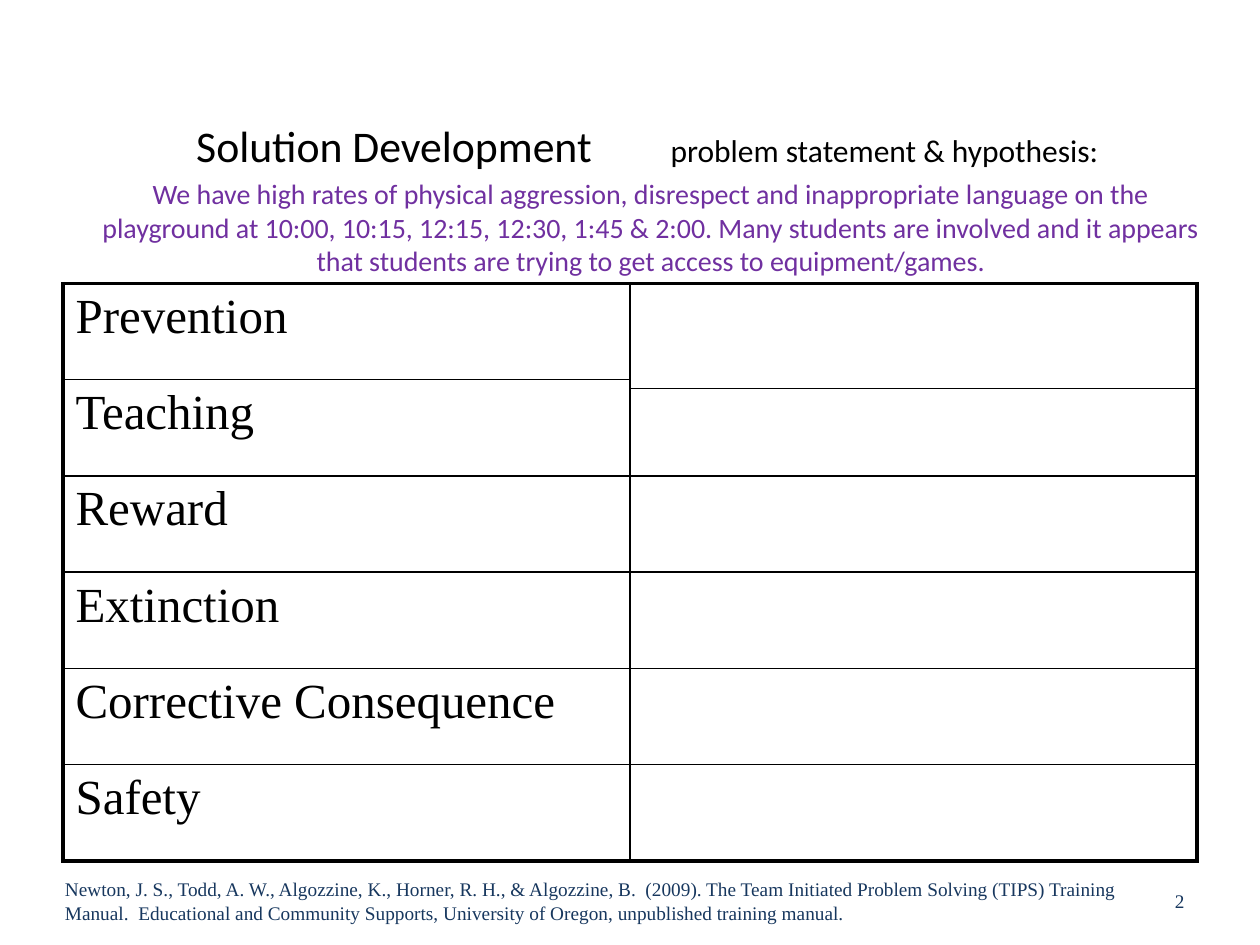
from dataclasses import dataclass

from lxml import etree
from pptx import Presentation
from pptx.dml.color import RGBColor
from pptx.enum.shapes import MSO_CONNECTOR
from pptx.enum.text import MSO_ANCHOR, MSO_AUTO_SIZE, PP_ALIGN
from pptx.oxml.ns import qn
from pptx.util import Pt

STRAIGHT = MSO_CONNECTOR.STRAIGHT
MIDDLE = MSO_ANCHOR.MIDDLE
NO_AUTOFIT = MSO_AUTO_SIZE.NONE
LEFT, CENTER, RIGHT = PP_ALIGN.LEFT, PP_ALIGN.CENTER, PP_ALIGN.RIGHT


@dataclass(frozen=True)
class Theme:
    heading_font: str = "Calibri"
    body_font: str = "Times New Roman"
    ink: str = "000000"
    statement: str = "7030A0"
    footer: str = "17375E"
    heading_size: int = 25
    gap_size: int = 40
    subheading_size: int = 18
    statement_size: int = 16
    strategy_size: int = 28
    footer_size: int = 11
    outer_border: float = 2.25
    inner_border: float = 1
    divider: float = 0.75


THEME = Theme()
STRATEGIES = ["Prevention", "Teaching", "Reward", "Extinction",
              "Corrective Consequence", "Safety"]
TABLE_LEFT, TABLE_TOP = 36, 162
COLUMN_WIDTH, ROW_HEIGHT = 324, 55
STATEMENT = (
    "We have high rates of physical aggression, disrespect and inappropriate "
    "language on the playground at 10:00, 10:15, 12:15, 12:30, 1:45 & 2:00. "
    "Many students are involved and it appears that students are trying to "
    "get access to equipment/games."
)
CITATION = (
    "Newton, J. S., Todd, A. W., Algozzine, K., Horner, R. H., & Algozzine, B.  "
    "(2009). The Team Initiated Problem Solving (TIPS) Training Manual.  "
    "Educational and Community Supports, University of Oregon, unpublished "
    "training manual."
)


def add_run(paragraph, text, size, color, font):
    run = paragraph.add_run()
    run.text = text
    run.font.size = Pt(size)
    run.font.name = font
    run.font.color.rgb = RGBColor.from_string(color)
    return run


def place_title(slide):
    title = slide.shapes.title
    title.left, title.top = Pt(48), Pt(42)
    title.width, title.height = Pt(648), Pt(144)
    frame = title.text_frame
    frame.auto_size = NO_AUTOFIT
    frame.word_wrap = True
    frame.vertical_anchor = MIDDLE
    frame.margin_bottom = Pt(20)
    heading = frame.paragraphs[0]
    heading.alignment = CENTER
    font = THEME.heading_font
    add_run(heading, "Solution Development", THEME.heading_size, THEME.ink, font)
    gap = add_run(heading, " ", THEME.gap_size, THEME.ink, font)
    gap.font._element.set("spc", "3600")
    add_run(heading, "problem statement & hypothesis: ",
            THEME.subheading_size, THEME.ink, font)
    heading.add_line_break()
    add_run(heading, STATEMENT, THEME.statement_size, THEME.statement, font)


def set_borders(cell, widths):
    properties = cell._tc.get_or_add_tcPr()
    for position, (side, width) in enumerate(widths.items()):
        border = etree.Element(qn(f"a:ln{side}"), w=str(int(Pt(width))))
        fill = etree.SubElement(border, qn("a:solidFill"))
        etree.SubElement(fill, qn("a:srgbClr"), val=THEME.ink)
        properties.insert(position, border)


def add_strategy_table(slide):
    row_count, column_count = len(STRATEGIES), 2
    table = slide.shapes.add_table(
        row_count, column_count, Pt(TABLE_LEFT), Pt(TABLE_TOP),
        Pt(COLUMN_WIDTH * column_count), Pt(ROW_HEIGHT * row_count)).table
    table.first_row = False
    table.horz_banding = False
    outer, inner = THEME.outer_border, THEME.inner_border
    for row, strategy in enumerate(STRATEGIES):
        for column in range(column_count):
            cell = table.cell(row, column)
            cell.fill.background()
            set_borders(cell, {
                "L": outer if column == 0 else inner,
                "R": outer if column == column_count - 1 else inner,
                "T": outer if row == 0 else inner,
                "B": outer if row == row_count - 1 else inner,
            })
        label = table.cell(row, 0).text_frame.paragraphs[0]
        add_run(label, strategy, THEME.strategy_size, THEME.ink, THEME.body_font)
    table.cell(0, 1).merge(table.cell(1, 1))


def add_divider(slide, left, right, y):
    divider = slide.shapes.add_connector(STRAIGHT, Pt(left), Pt(y), Pt(right), Pt(y))
    divider.line.color.rgb = RGBColor.from_string(THEME.ink)
    divider.line.width = Pt(THEME.divider)
    etree.SubElement(divider._element.spPr, qn("a:effectLst"))


def add_footer(slide, text, left, width, alignment):
    footer = slide.shapes.add_textbox(Pt(left), Pt(500.4), Pt(width), Pt(28.8))
    frame = footer.text_frame
    frame.word_wrap = True
    frame.vertical_anchor = MIDDLE
    paragraph = frame.paragraphs[0]
    paragraph.alignment = alignment
    add_run(paragraph, text, THEME.footer_size, THEME.footer, THEME.body_font)


def main():
    deck = Presentation()
    deck.slide_width, deck.slide_height = Pt(720), Pt(540)
    slide = deck.slides.add_slide(deck.slide_layouts.get_by_name("Title Only"))
    place_title(slide)
    add_strategy_table(slide)
    answers_left = TABLE_LEFT + COLUMN_WIDTH
    add_divider(slide, answers_left, answers_left + COLUMN_WIDTH, 222)
    add_footer(slide, "2", 516, 168, RIGHT)
    add_footer(slide, CITATION, 30, 624, LEFT)
    deck.save("out.pptx")


if __name__ == "__main__":
    main()
